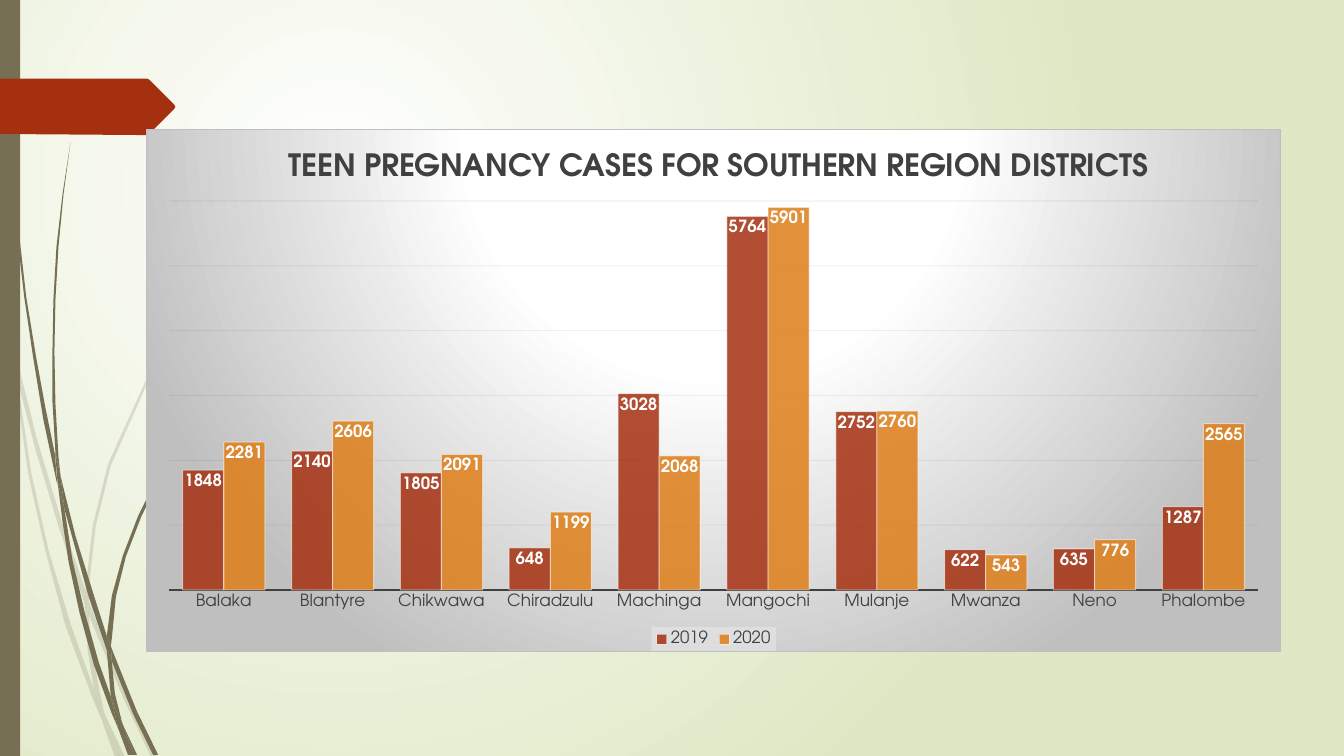
from pptx import Presentation
from pptx.chart.data import CategoryChartData
from pptx.dml.color import RGBColor
from pptx.enum.chart import XL_CHART_TYPE, XL_LABEL_POSITION, XL_LEGEND_POSITION, XL_TICK_MARK
from pptx.enum.shapes import MSO_SHAPE
from pptx.oxml import parse_xml
from pptx.oxml.ns import nsdecls, qn
from pptx.util import Pt

FONT = "TeX Gyre Adventor"
WHITE = RGBColor(0xFF, 0xFF, 0xFF)
PALE_GREEN = RGBColor(0xDF, 0xE8, 0xC4)
OLIVE = RGBColor(0x76, 0x6F, 0x54)
RUST = RGBColor(0xA5, 0x30, 0x10)
ORANGE = RGBColor(0xDE, 0x7E, 0x18)
CHARCOAL = RGBColor(0x40, 0x40, 0x40)
NEAR_BLACK = RGBColor(0x0D, 0x0D, 0x0D)
SILVER = RGBColor(0xBF, 0xBF, 0xBF)
MIST = RGBColor(0xF2, 0xF2, 0xF2)
AXIS_TEXT = {"name": FONT, "size": Pt(12), "bold": False}
LABEL_TEXT = {"name": FONT, "size": Pt(12), "bold": True}
TITLE_TEXT = {"name": FONT, "size": Pt(22), "bold": True}

# Outlines are drawn on a grid of this step
GRID = Pt(0.72)
FADED_BLADES = [
    [(11, 350), (9, 322), (0, 282), (0, 299), (10, 344)],
    [(58, 522), (84, 599), (85, 586), (62, 520), (36, 433), (14, 345), (17, 376), (36, 449)],
    [(92, 607), (88, 596), (88, 610), (123, 694), (150, 751), (155, 751), (127, 692)],
    [(119, 751), (124, 751), (105, 711)],
    [(93, 683), (70, 619), (48, 545), (31, 469), (17, 376), (11, 350), (28, 470), (45, 546),
     (65, 621), (92, 693), (101, 714), (99, 707)],
    [(84, 599), (87, 646), (93, 683), (96, 692), (105, 711), (103, 706), (91, 646), (88, 610), (88, 608)],
    [(88, 584), (95, 522), (110, 462), (160, 349), (229, 245), (268, 198), (312, 154), (312, 153),
     (268, 197), (228, 244), (158, 348), (107, 461), (92, 522), (85, 584), (85, 586), (88, 596)],
    [(101, 714), (114, 751), (119, 751)],
    [(88, 608), (88, 610), (88, 596), (85, 586), (84, 599)],
    [(96, 692), (93, 683), (99, 707), (101, 714), (119, 751), (105, 711)],
]
DARK_BLADES = [
    [(7, 110), (17, 233), (24, 294), (33, 355), (43, 416), (56, 477), (57, 481), (55, 457), (55, 453),
     (45, 404), (36, 355), (26, 294), (19, 232), (8, 109), (5, 48), (4, 0), (3, 0), (4, 48)],
    [(88, 592), (106, 645), (106, 631), (93, 590), (75, 532), (60, 472), (64, 505)],
    [(113, 649), (110, 641), (111, 656), (132, 708), (152, 749), (157, 749), (136, 706)],
    [(110, 691), (98, 657), (84, 607), (72, 556), (64, 505), (57, 477), (62, 517), (68, 557), (79, 608),
     (93, 659), (111, 708), (117, 722), (116, 717)],
    [(60, 472), (58, 453), (55, 401), (54, 349), (55, 297), (58, 245), (63, 193), (70, 141), (62, 193),
     (56, 245), (53, 297), (52, 349), (52, 398), (55, 449)],
    [(133, 749), (136, 749), (122, 719)],
    [(57, 477), (64, 505), (60, 472), (55, 449), (55, 453)],
    [(111, 633), (115, 592), (125, 552), (140, 513), (158, 476), (205, 406), (231, 374), (261, 344),
     (260, 344), (231, 373), (204, 405), (156, 474), (137, 512), (122, 551), (111, 591), (106, 631), (110, 641)],
    [(117, 722), (127, 749), (131, 749)],
    [(106, 645), (110, 691), (116, 706), (122, 719), (121, 716), (114, 688), (111, 656), (109, 651)],
    [(106, 645), (109, 651), (111, 656), (110, 641), (106, 631)],
    [(116, 706), (110, 691), (116, 717), (117, 722), (130, 749), (133, 749), (122, 719)],
]
ARROW_TAG = [(0, 78), (146, 78), (148, 79), (173, 104), (174, 106), (173, 108), (148, 133), (146, 134),
             (136, 134), (0, 133)]

DISTRICTS = ["Balaka", "Blantyre", "Chikwawa", "Chiradzulu", "Machinga",
             "Mangochi", "Mulanje", "Mwanza", "Neno", "Phalombe"]
CASES = {
    "2019": (RUST, [1848, 2140, 1805, 648, 3028, 5764, 2752, 622, 635, 1287]),
    "2020": (ORANGE, [2281, 2606, 2091, 1199, 2068, 5901, 2760, 543, 776, 2565]),
}


def paint(fill, color, opacity=100):
    fill.solid()
    fill.fore_color.rgb = color
    if opacity < 100:
        fill._xPr.find(".//" + qn("a:srgbClr")).append(
            parse_xml(f'<a:alpha {nsdecls("a")} val="{opacity * 1000}"/>'))


def stroke(line, color, width, opacity=100):
    line.width = Pt(width)
    paint(line.fill, color, opacity)


def style(font, values, color):
    for name, value in values.items():
        setattr(font, name, value)
    font.color.rgb = color


def glow(stops, left, top, right, bottom):
    """Circular gradient; stops are (percent, colour), the edges percents."""
    marks = "".join(f'<a:gs pos="{at * 1000}"><a:srgbClr val="{color}"/></a:gs>' for at, color in stops)
    return parse_xml(
        f'<a:gradFill {nsdecls("a")} rotWithShape="1"><a:gsLst>{marks}</a:gsLst>'
        f'<a:path path="circle"><a:fillToRect l="{left * 1000}" t="{top * 1000}" '
        f'r="{right * 1000}" b="{bottom * 1000}"/></a:path></a:gradFill>')


def finish(shape, color, opacity=100):
    shape.shadow.inherit = False
    shape.line.fill.background()
    paint(shape.fill, color, opacity)


def add_outline(page, points, color, opacity=100):
    builder = page.shapes.build_freeform(*points[0], scale=GRID)
    builder.add_line_segments(points[1:], close=True)
    finish(builder.convert_to_shape(), color, opacity)


def place(owner, next_tag, **parts):
    """Fix a chart part at fractions of the chart area."""
    for old in owner.findall(qn("c:layout")):
        owner.remove(old)
    target = '<c:layoutTarget val="inner"/>' if next_tag == "c:barChart" else ""
    sizes = "".join(f'<c:{key} val="{value}"/>' for key, value in parts.items())
    owner.find(qn(next_tag)).addprevious(parse_xml(
        f'<c:layout {nsdecls("c")}><c:manualLayout>{target}<c:xMode val="edge"/><c:yMode val="edge"/>'
        f'{sizes}</c:manualLayout></c:layout>'))


def add_background(page):
    fill = page.background.fill
    fill.gradient()
    old = fill._xPr.find(qn("a:gradFill"))
    old.getparent().replace(old, glow([(0, WHITE), (100, PALE_GREEN)], 50, 50, 100, 100))


def add_cases_chart(page):
    data = CategoryChartData()
    data.categories = DISTRICTS
    for year, (_, values) in CASES.items():
        data.add_series(year, values)
    chart = page.shapes.add_chart(XL_CHART_TYPE.COLUMN_CLUSTERED, Pt(104.4), Pt(92.16),
                                  Pt(810.72), Pt(373.68), data).chart
    # Chart area
    area = parse_xml(f'<c:spPr {nsdecls("c", "a")}><a:ln w="{Pt(0.75)}"><a:solidFill>'
                     f'<a:srgbClr val="{SILVER}"/></a:solidFill></a:ln></c:spPr>')
    area.insert(0, glow([(0, WHITE), (39, WHITE), (100, SILVER)], 50, -80, 50, 180))
    chart.element.find(qn("c:chart")).addnext(area)
    # Title
    chart.chart_title.include_in_layout = False
    span = chart.chart_title.text_frame.paragraphs[0].add_run()
    span.text = " TEEN PREGNANCY CASES FOR SOUTHERN REGION DISTRICTS"
    style(span.font, TITLE_TEXT, CHARCOAL)
    place(chart.chart_title._element, "c:overlay", x=0.113, y=0.03)
    # Columns
    plot = chart.plots[0]
    plot.gap_width, plot.overlap, plot.vary_by_categories = 65, 0, False
    for series, (color, _) in zip(plot.series, CASES.values()):
        paint(series.format.fill, color, 85)
        stroke(series.format.line, WHITE, 0.75, 50)
        series.data_labels.show_value = True
        series.data_labels.position = XL_LABEL_POSITION.INSIDE_END
        style(series.data_labels.font, LABEL_TEXT, WHITE)
    place(plot._element.getparent(), "c:barChart", x=0.02, y=0.137, w=0.96, h=0.745)
    # Axes
    districts, counts = chart.category_axis, chart.value_axis
    districts.major_tick_mark = XL_TICK_MARK.NONE
    style(districts.tick_labels.font, AXIS_TEXT, CHARCOAL)
    stroke(districts.format.line, CHARCOAL, 1.5)
    counts.minimum_scale, counts.maximum_scale, counts.major_unit = 0, 6000, 1000
    stroke(counts.major_gridlines.format.line, NEAR_BLACK, 0.75, 5)
    counts.visible = False
    # Legend
    chart.has_legend = True
    legend = chart.legend
    legend.position, legend.include_in_layout = XL_LEGEND_POSITION.BOTTOM, False
    style(legend.font, AXIS_TEXT, CHARCOAL)
    place(legend._element, "c:overlay", x=0.445, y=0.953, w=0.11, h=0.046)
    legend._element.find(qn("c:overlay")).addnext(parse_xml(
        f'<c:spPr {nsdecls("c", "a")}><a:solidFill><a:srgbClr val="{MIST}">'
        '<a:alpha val="39000"/></a:srgbClr></a:solidFill></c:spPr>'))


def main():
    deck = Presentation()
    deck.slide_width, deck.slide_height = Pt(960), Pt(540)
    page = deck.slides.add_slide(deck.slide_layouts[6])
    add_background(page)
    # Grass, side band and arrow tag
    for blades, opacity in ((FADED_BLADES, 20), (DARK_BLADES, 100)):
        for blade in blades:
            add_outline(page, blade, OLIVE, opacity)
    finish(page.shapes.add_shape(MSO_SHAPE.RECTANGLE, 0, 0, Pt(14.4), Pt(540)), OLIVE)
    add_outline(page, ARROW_TAG, RUST)
    add_cases_chart(page)
    deck.save("out.pptx")


if __name__ == "__main__":
    main()
